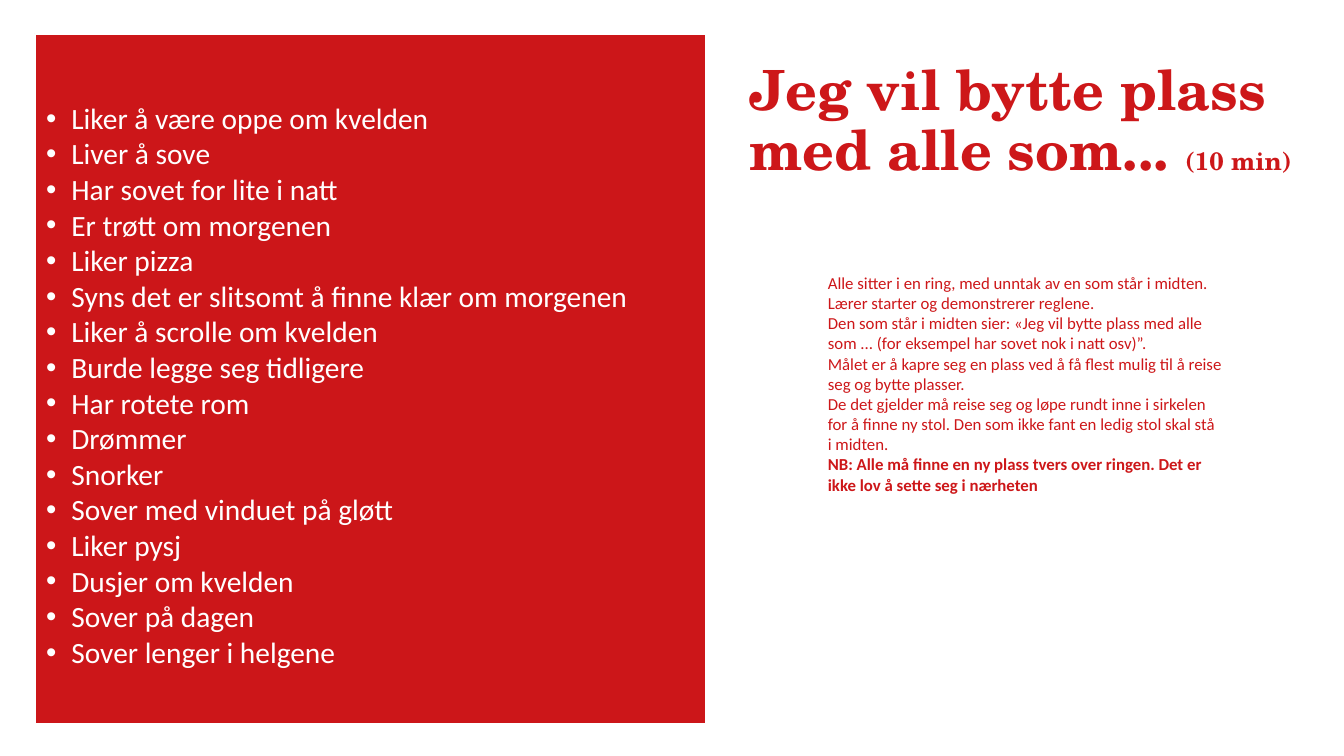
from dataclasses import dataclass

from lxml import etree
from pptx import Presentation
from pptx import util as u
from pptx.dml.color import RGBColor
from pptx.enum import shapes, text
from pptx.oxml import ns


@dataclass(frozen=True)
class Theme:
    red: str = "CD1719"
    panel: str = "CC1619"
    white: str = "FFFFFF"
    head: str = "TeX Gyre Schola"
    body: str = "Calibri"
    title: float = 39.6
    time: float = 18
    list: float = 21
    rules: float = 12


def px(n):
    return u.Emu(n * 9525)


class Deck:
    def __init__(self, theme):
        self.theme = theme
        self.prs = Presentation()
        self.prs.slide_width, self.prs.slide_height = px(1280), px(720)
        self.slide = self.prs.slides.add_slide(self.prs.slide_layouts[5])

    def run(self, para, words, size, face, color, bold=False):
        run = para.add_run()
        run.text = words
        font = run.font
        font.size, font.name, font.bold = u.Pt(size), face, bold
        font.color.rgb = RGBColor.from_string(color)

    def paras(self, frame, count):
        for i in range(count):
            para = frame.add_paragraph() if i else frame.paragraphs[0]
            para.alignment = text.PP_ALIGN.LEFT
            yield para

    def title(self, box, parts):
        t = self.theme
        shape = self.slide.shapes.title
        shape.left, shape.top, shape.width, shape.height = map(px, box)
        frame = shape.text_frame
        frame.word_wrap = True
        frame.auto_size = text.MSO_AUTO_SIZE.NONE
        frame.vertical_anchor = text.MSO_ANCHOR.MIDDLE
        para = next(self.paras(frame, 1))
        para.line_spacing = 0.9
        for words, size in parts:
            self.run(para, words, size, t.head, t.red, True)

    def panel(self, box, items):
        t = self.theme
        shape = self.slide.shapes.add_shape(shapes.MSO_SHAPE.RECTANGLE, *map(px, box))
        shape.shadow.inherit = False
        shape.fill.solid()
        shape.fill.fore_color.rgb = RGBColor.from_string(t.panel)
        shape.line.color.rgb = RGBColor.from_string(t.white)
        shape.line.width = u.Pt(1.5)
        frame = shape.text_frame
        frame.word_wrap = True
        frame.vertical_anchor = text.MSO_ANCHOR.TOP
        frame.margin_left = frame.margin_right = frame.margin_bottom = px(11)
        frame.margin_top = px(67)
        for para, words in zip(self.paras(frame, len(items)), items):
            para.line_spacing = 0.9
            para.space_after = u.Pt(2.75)
            self.bullet(para)
            self.run(para, words, t.list, t.body, t.white)

    def bullet(self, para):
        props = para._p.get_or_add_pPr()
        props.set("marL", str(px(24)))
        props.set("indent", str(px(-24)))
        font = etree.SubElement(props, ns.qn("a:buFont"))
        font.set("typeface", "Arial")
        mark = etree.SubElement(props, ns.qn("a:buChar"))
        mark.set("char", "•")

    def rules(self, box, lines, note):
        t = self.theme
        frame = self.slide.shapes.add_textbox(*map(px, box)).text_frame
        frame.word_wrap = True
        frame.auto_size = text.MSO_AUTO_SIZE.SHAPE_TO_FIT_TEXT
        rows = [(line, False) for line in lines] + [(note, True)]
        for para, (words, bold) in zip(self.paras(frame, len(rows)), rows):
            self.run(para, words, t.rules, t.body, t.red, bold)


ITEMS = [
    "Liker å være oppe om kvelden",
    "Liver å sove",
    "Har sovet for lite i natt",
    "Er trøtt om morgenen",
    "Liker pizza",
    "Syns det er slitsomt å finne klær om morgenen",
    "Liker å scrolle om kvelden",
    "Burde legge seg tidligere",
    "Har rotete rom",
    "Drømmer",
    "Snorker",
    "Sover med vinduet på gløtt",
    "Liker pysj",
    "Dusjer om kvelden",
    "Sover på dagen",
    "Sover lenger i helgene",
]
RULES = [
    "Alle sitter i en ring, med unntak av en som står i midten.",
    "Lærer starter og demonstrerer reglene.",
    "Den som står i midten sier: «Jeg vil bytte plass med alle som ... "
    "(for eksempel har sovet nok i natt osv)”.",
    "Målet er å kapre seg en plass ved å få flest mulig til å reise seg og bytte plasser.",
    "De det gjelder må reise seg og løpe rundt inne i sirkelen for å finne ny stol. "
    "Den som ikke fant en ledig stol skal stå i midten.",
]
NOTE = "NB: Alle må finne en ny plass tvers over ringen. Det er ikke lov å sette seg i nærheten"


def main():
    theme = Theme()
    deck = Deck(theme)
    deck.title((704, 47, 564, 139), [
        ("Jeg vil bytte plass med alle som... ", theme.title),
        ("(10 min)", theme.time),
    ])
    deck.panel((33, 32, 639, 658), ITEMS)
    deck.rules((779, 255, 395, 242), RULES, NOTE)
    deck.prs.save("out.pptx")


if __name__ == "__main__":
    main()
